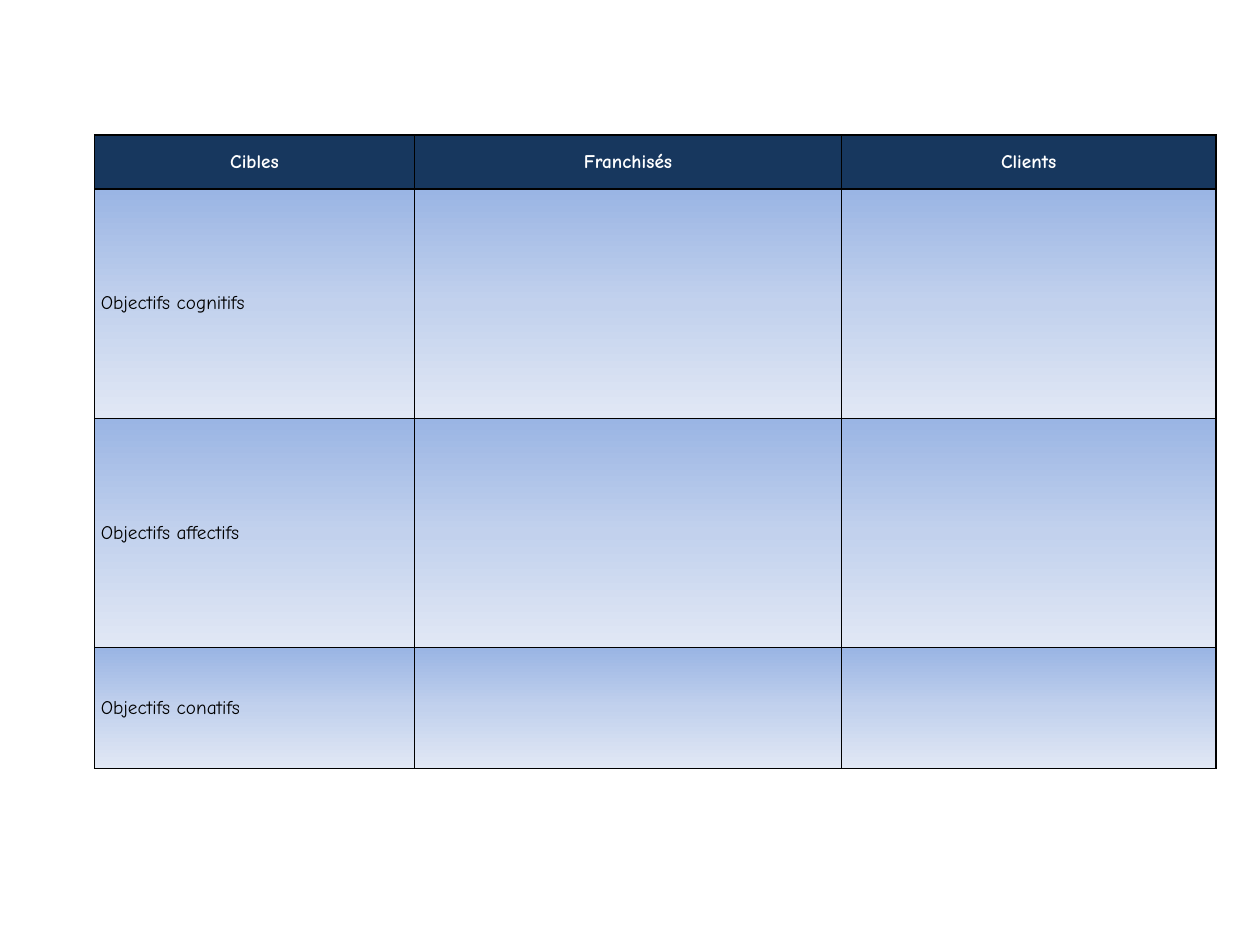
from lxml import etree
from pptx import Presentation
from pptx.dml.color import RGBColor
from pptx.enum.text import MSO_ANCHOR as Anchor, PP_ALIGN as Align
from pptx.oxml.ns import qn
from pptx.util import Inches, Pt

COLORS = {
    "header": "17375E",
    "header_text": "FFFFFF",
    "text": "000000",
    "border": "000000",
}
BODY_GRADIENT = [(0, "9AB5E4"), (50, "C2D1ED"), (100, "E1E8F5")]

TARGETS = ["Cibles", "Franchisés", "Clients"]
OBJECTIVES = ["Objectifs cognitifs", "Objectifs affectifs", "Objectifs conatifs"]
COLUMN_WIDTHS = [2.54, 3.39, 2.97]
ROW_HEIGHTS = [0.43, 1.82, 1.82, 0.96]


def write_text(cell, text, *, font, size, color, bold=False, align=Align.JUSTIFY):
    cell.vertical_anchor = Anchor.MIDDLE
    cell.margin_left = cell.margin_right = Inches(0.05)
    cell.margin_top = cell.margin_bottom = 0
    paragraph = cell.text_frame.paragraphs[0]
    paragraph.alignment = align
    paragraph.space_after = Pt(3)
    run = paragraph.add_run()
    run.text = text
    run.font.name = font
    run.font.size = Pt(size)
    run.font.bold = bold
    run.font.color.rgb = RGBColor.from_string(color)


def add_color(parent, color):
    etree.SubElement(parent, qn("a:srgbClr"), val=color)


class SlideBuilder:
    font = "Comic Neue"
    size = 11
    border_width = 1

    def __init__(self, slide):
        self.slide = slide

    def borders(self, cell):
        properties = cell._tc.get_or_add_tcPr()
        for side in ("a:lnL", "a:lnR", "a:lnT", "a:lnB"):
            line = etree.SubElement(properties, qn(side), w=str(Pt(self.border_width)))
            add_color(etree.SubElement(line, qn("a:solidFill")), COLORS["border"])

    def gradient(self, cell, stops):
        fill = etree.SubElement(cell._tc.get_or_add_tcPr(), qn("a:gradFill"))
        stop_list = etree.SubElement(fill, qn("a:gsLst"))
        for percent, color in stops:
            stop = etree.SubElement(stop_list, qn("a:gs"), pos=str(percent * 1000))
            add_color(stop, color)
        etree.SubElement(fill, qn("a:lin"), ang=str(90 * 60000), scaled="0")

    def header_cell(self, cell, text):
        self.borders(cell)
        cell.fill.solid()
        cell.fill.fore_color.rgb = RGBColor.from_string(COLORS["header"])
        write_text(cell, text, font=self.font, size=self.size, bold=True,
                   color=COLORS["header_text"], align=Align.CENTER)

    def body_cell(self, cell, text=""):
        self.borders(cell)
        self.gradient(cell, BODY_GRADIENT)
        if text:
            write_text(cell, text, font=self.font, size=self.size, color=COLORS["text"])

    def objectives_table(self, left, top):
        table = self.slide.shapes.add_table(
            len(ROW_HEIGHTS), len(COLUMN_WIDTHS), Inches(left), Inches(top),
            Inches(sum(COLUMN_WIDTHS)), Inches(sum(ROW_HEIGHTS))).table
        for column, width in zip(table.columns, COLUMN_WIDTHS):
            column.width = Inches(width)
        for row, height in zip(table.rows, ROW_HEIGHTS):
            row.height = Inches(height)

        # Header row: the targets
        for column, target in enumerate(TARGETS):
            self.header_cell(table.cell(0, column), target)

        # One row per objective, with free cells for each target
        for row, objective in enumerate(OBJECTIVES, start=1):
            self.body_cell(table.cell(row, 0), objective)
            for column in range(1, len(TARGETS)):
                self.body_cell(table.cell(row, column))


def main():
    deck = Presentation()
    deck.slide_width, deck.slide_height = Inches(10), Inches(7.5)
    blank_layout = deck.slide_layouts[6]
    builder = SlideBuilder(deck.slides.add_slide(blank_layout))
    builder.objectives_table(0.75, 1.07)
    deck.save("out.pptx")


if __name__ == "__main__":
    main()
